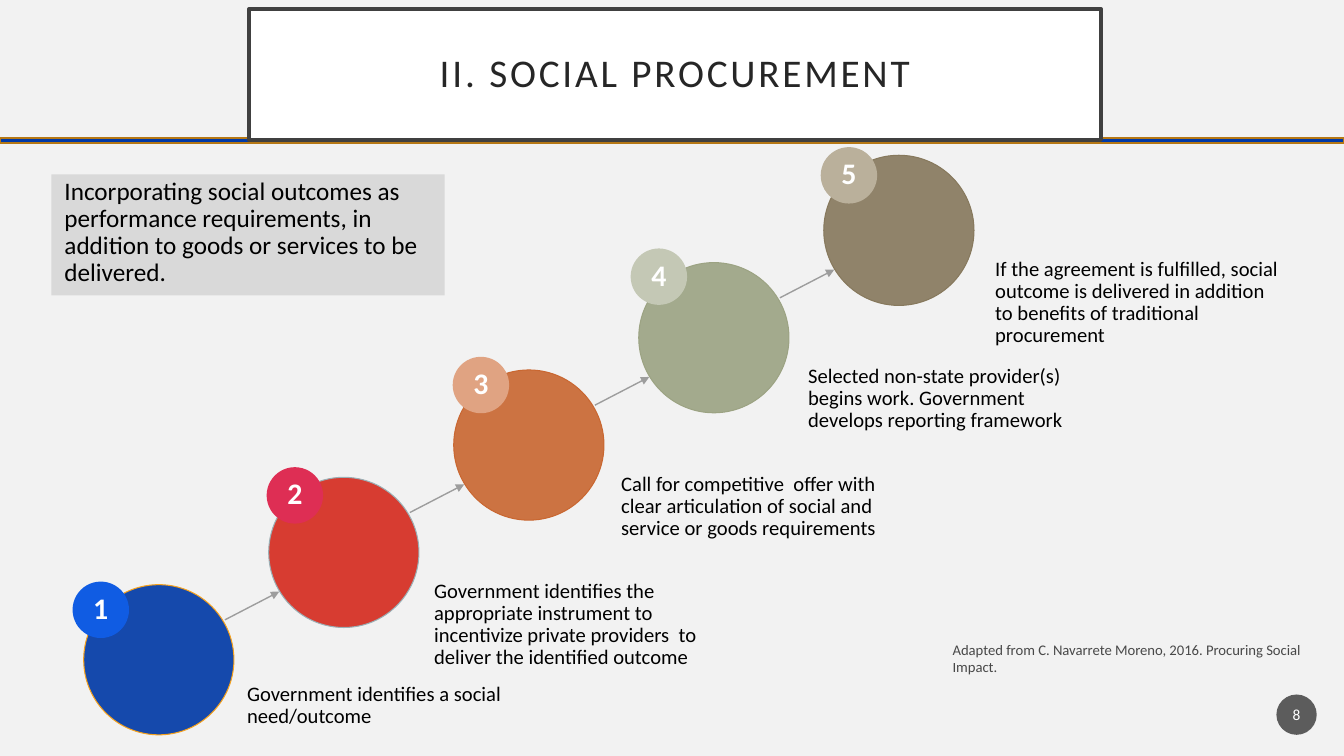
from dataclasses import dataclass

import pptx
import pptx.dml.color
import pptx.enum.shapes
import pptx.enum.text
import pptx.oxml.ns
import pptx.util
from lxml import etree

Inches = pptx.util.Inches
Shapes = pptx.enum.shapes.MSO_SHAPE
Align = pptx.enum.text.PP_ALIGN
Anchor = pptx.enum.text.MSO_ANCHOR
AutoSize = pptx.enum.text.MSO_AUTO_SIZE
qn = pptx.oxml.ns.qn


@dataclass(frozen=True)
class Theme:
    font: str = "Calibri"
    background: str = "F2F2F2"
    band: str = "0039A6"
    band_line: str = "B67815"
    white: str = "FFFFFF"
    black: str = "000000"
    title_text: str = "262626"
    title_line: str = "404040"
    note_fill: str = "D9D9D9"
    page_fill: str = "1D1D1D"
    title_size: float = 28
    badge_size: float = 21.3
    note_size: float = 18
    step_size: float = 14.7
    page_size: float = 11
    source_size: float = 10.5


@dataclass(frozen=True)
class Step:
    text: str
    lines: int
    fill: str
    line: str
    badge_fill: str
    badge_offset: tuple
    text_drop: float = 0.98


THEME = Theme()

STEPS = [
    Step("Government identifies a social need/outcome",
         2, "0039A6", "F6A21D", "105CE3", (-0.11, -0.03), 0.94),
    Step("Government identifies the appropriate instrument to incentivize "
         "private providers  to deliver the identified outcome",
         4, "D52B1E", "9BAFB5", "DE2E54", (-0.02, -0.1)),
    Step("Call for competitive  offer with clear articulation of social and "
         "service or goods requirements",
         3, "C96731", "C96731", "E0A382", (-0.01, -0.13)),
    Step("Selected non-state provider(s) begins work. Government develops "
         "reporting framework",
         3, "9CA383", "9CA383", "C4C8B5", (-0.08, -0.14)),
    Step("If the agreement is fulfilled, social outcome is delivered in "
         "addition to benefits of traditional procurement",
         4, "87795D", "87795D", "BAB09B", (-0.03, -0.08)),
]


def rgb(value):
    return pptx.dml.color.RGBColor.from_string(value)


def set_alpha(parent, percent):
    """Make the solid colour directly inside parent partly transparent."""
    color = parent.find(qn("a:solidFill"))[0]
    etree.SubElement(color, qn("a:alpha")).set("val", str(percent * 1000))


def add_shape(slide, kind, box, fill, line=None, line_width=1, alpha=None):
    shape = slide.shapes.add_shape(kind, *map(Inches, box))
    shape.shadow.inherit = False
    shape.fill.solid()
    shape.fill.fore_color.rgb = rgb(fill)
    if alpha:
        set_alpha(shape.element.spPr, alpha)
    if line:
        shape.line.color.rgb = rgb(line)
        shape.line.width = pptx.util.Pt(line_width)
    else:
        shape.line.fill.background()
    return shape


def set_text(shape, text, size, color=THEME.black, bold=False, align=Align.LEFT,
             anchor=Anchor.TOP, insets=(0.1, 0.05, 0.1, 0.05), spacing=None,
             wrap=True, grow=False, tracking=None, alpha=None):
    frame = shape.text_frame
    frame.word_wrap = wrap
    frame.auto_size = AutoSize.SHAPE_TO_FIT_TEXT if grow else AutoSize.NONE
    frame.vertical_anchor = anchor
    (frame.margin_left, frame.margin_top,
     frame.margin_right, frame.margin_bottom) = map(Inches, insets)
    paragraph = frame.paragraphs[0]
    paragraph.alignment = align
    if spacing:
        paragraph.line_spacing = spacing
    run = paragraph.add_run()
    run.text = text
    run.font.name = THEME.font
    run.font.size = pptx.util.Pt(size)
    run.font.bold = bold
    run.font.color.rgb = rgb(color)
    properties = run.font.element if hasattr(run.font, "element") else run._r.rPr
    if tracking:
        properties.set("spc", str(tracking * 100))
    if alpha:
        set_alpha(properties, alpha)


def add_arrow(slide, start, end):
    arrow = slide.shapes.add_connector(
        pptx.enum.shapes.MSO_CONNECTOR.STRAIGHT, *map(Inches, start + end))
    arrow.line.color.rgb = rgb(THEME.black)
    arrow.line.width = pptx.util.Pt(1)
    line = arrow.line._get_or_add_ln()
    set_alpha(line, 34)
    etree.SubElement(line, qn("a:tailEnd")).set("type", "triangle")
    etree.SubElement(arrow.element.spPr, qn("a:effectLst"))


def add_header(slide, box):
    left, top, width, height = box
    add_shape(slide, Shapes.RECTANGLE, (left, top + height - 0.05, width, 0.05),
              THEME.band, THEME.band_line)
    title = add_shape(slide, Shapes.RECTANGLE,
                      (left + 2.47, top + 0.09, 8.45, 1.3),
                      THEME.white, THEME.title_line, 2.5)
    set_text(title, "II. SOCIAL PROCUREMENT", THEME.title_size, THEME.title_text,
             align=Align.CENTER, anchor=Anchor.MIDDLE, insets=(0.2,) * 4,
             spacing=0.9, tracking=2)


def add_note(slide, box):
    note = add_shape(slide, Shapes.RECTANGLE, box, THEME.note_fill)
    set_text(note, "Incorporating social outcomes as performance requirements, in "
             "addition to goods or services to be delivered.", THEME.note_size,
             insets=(0.13, 0.05, 0.13, 0.07), spacing=0.89, grow=True)


def add_staircase(slide, box):
    left, top, width, height = box
    diameter, badge, text_width = 1.49, 0.56, 3.35
    rise = (height - diameter) / (len(STEPS) - 1)
    run = 1.835
    corners = [(left + index * run, top + height - diameter - index * rise)
               for index in range(len(STEPS))]

    # Circles
    for step, (x, y) in zip(STEPS, corners):
        add_shape(slide, Shapes.OVAL, (x, y, diameter, diameter),
                  step.fill, step.line, 0.75, alpha=91)

    # Arrows from each circle to the next
    for x, y in corners[:-1]:
        add_arrow(slide, (x + 1.4, y + 0.35), (x + 1.94, y + 0.07))

    # Descriptions and numbered badges
    for index, (step, (x, y)) in enumerate(zip(STEPS, corners)):
        label = slide.shapes.add_textbox(
            Inches(x + 1.35 + 0.02 * index), Inches(y + step.text_drop),
            Inches(text_width), Inches(0.12 + 0.22 * step.lines))
        set_text(label, step.text, THEME.step_size,
                 insets=(0.27, 0.05, 0.27, 0.07), spacing=0.89, grow=True)
        shift_x, shift_y = step.badge_offset
        number = add_shape(slide, Shapes.OVAL,
                           (x + shift_x, y + shift_y, badge, badge),
                           step.badge_fill)
        set_text(number, str(index + 1), THEME.badge_size, THEME.white, bold=True,
                 align=Align.CENTER, anchor=Anchor.MIDDLE, insets=(0,) * 4,
                 spacing=0.89, wrap=False)


def add_footer(slide, box):
    left, top, width, height = box
    source = slide.shapes.add_textbox(*map(Inches, (left, top, width, 0.42)))
    set_text(source, "Adapted from C. Navarrete Moreno, 2016. Procuring Social "
             "Impact.", THEME.source_size, anchor=Anchor.MIDDLE, alpha=70)
    page = add_shape(slide, Shapes.OVAL,
                     (left + 3.31, top + height - 0.4, 0.4, 0.4),
                     THEME.page_fill, alpha=70)
    set_text(page, "8", THEME.page_size, THEME.white, align=Align.CENTER,
             anchor=Anchor.MIDDLE, insets=(0.02, 0.05, 0.02, 0.05))


def main():
    presentation = pptx.Presentation()
    presentation.slide_width = Inches(13.33)
    presentation.slide_height = Inches(7.5)
    slide = presentation.slides.add_slide(presentation.slide_layouts[6])
    slide.background.fill.solid()
    slide.background.fill.fore_color.rgb = rgb(THEME.background)

    add_header(slide, (0, 0, 13.33, 1.42))
    add_staircase(slide, (0.83, 1.54, 12.12, 5.75))
    add_note(slide, (0.51, 1.73, 3.9, 1.2))
    add_footer(slide, (9.35, 6.32, 3.86, 0.97))
    presentation.save("out.pptx")


if __name__ == "__main__":
    main()
